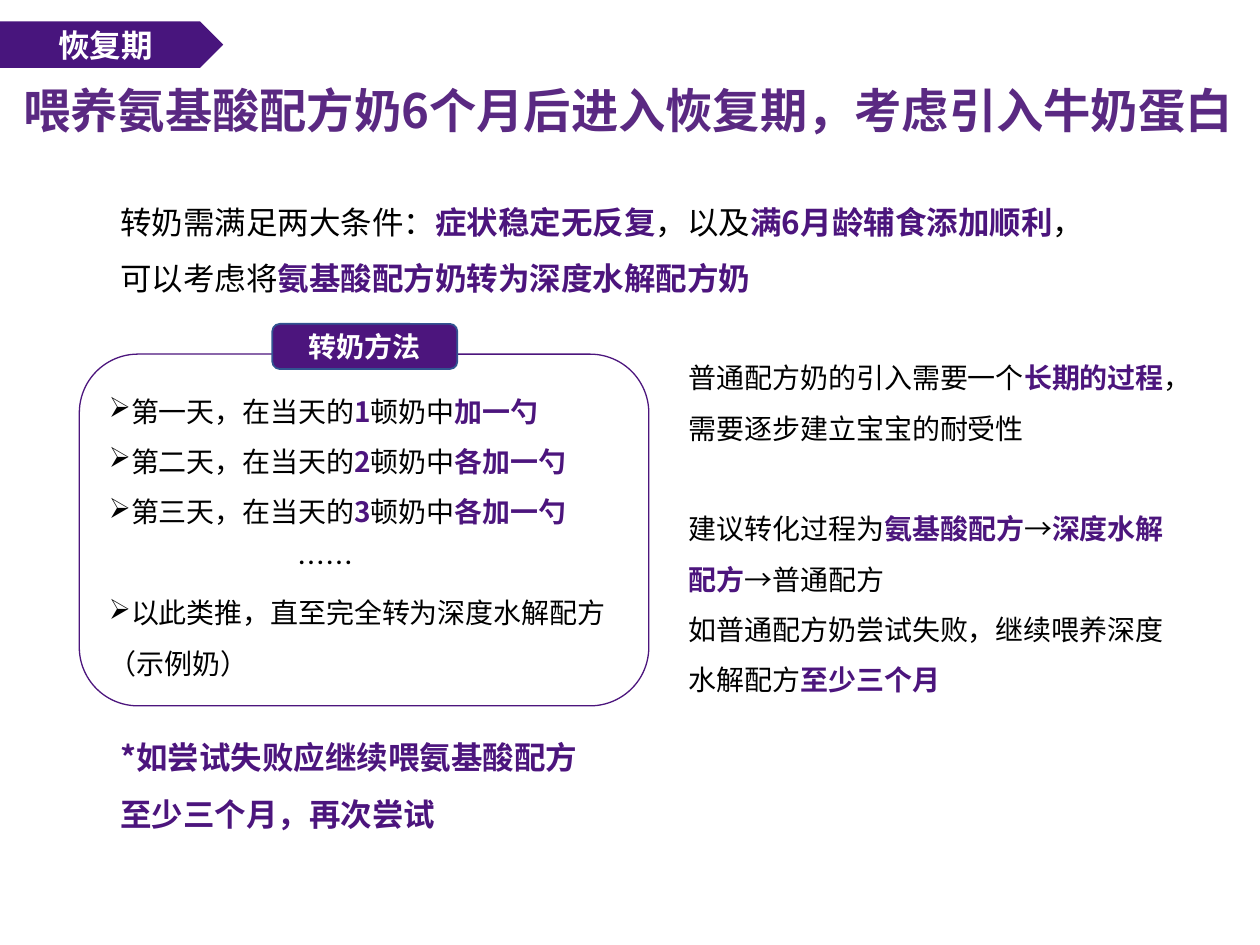
"""Builds the slide on moving a baby from amino acid formula back to milk protein."""
import pptx
import pptx.dml.color
import pptx.enum.shapes
import pptx.enum.text
import pptx.oxml.ns
import pptx.util
from lxml import etree

Cm, Pt = pptx.util.Cm, pptx.util.Pt
RGBColor = pptx.dml.color.RGBColor
SHAPES = pptx.enum.shapes.MSO_SHAPE
ALIGN = pptx.enum.text.PP_ALIGN
ANCHOR = pptx.enum.text.MSO_ANCHOR
qn = pptx.oxml.ns.qn

PURPLE = RGBColor(0x4C, 0x15, 0x7D)
TAG_PURPLE = RGBColor(0x48, 0x15, 0x7D)
TITLE_PURPLE = RGBColor(0x5A, 0x29, 0x82)
LABEL_EDGE = RGBColor(0x32, 0x54, 0x91)
BLACK = RGBColor(0, 0, 0)
WHITE = RGBColor(255, 255, 255)


class Deck:
    """Holds the text style and the current slide."""

    font = "Noto Sans CJK SC"

    def __init__(self, slide):
        self.slide = slide

    def paragraph(self, frame, parts, size, first=False, color=BLACK, strong=PURPLE,
                  spacing=1.5, align=ALIGN.LEFT):
        """Adds a paragraph whose every second part is emphasised."""
        paragraph = frame.paragraphs[0] if first else frame.add_paragraph()
        paragraph.line_spacing = spacing
        paragraph.alignment = align
        for index, words in enumerate(parts):
            emphasised = index % 2 == 1
            if not words:
                continue
            run = paragraph.add_run()
            run.text = words
            run.font.size = Pt(size)
            run.font.name = self.font
            run.font.bold = emphasised
            run.font.color.rgb = strong if emphasised else color
            latin = run.font._element.find(qn("a:latin"))
            east_asian = etree.Element(qn("a:ea"), typeface=self.font)
            latin.addnext(east_asian)
        return paragraph

    def text(self, box, paragraphs, size, **style):
        """Adds a wrapped text box and returns its paragraphs."""
        frame = self.slide.shapes.add_textbox(*map(Cm, box)).text_frame
        frame.word_wrap = True
        return [self.paragraph(frame, parts, size, first=index == 0, **style)
                for index, parts in enumerate(paragraphs)]

    def shape(self, kind, box, fill=None, edge=None, width=0.75):
        """Adds a flat preset shape and returns its text frame."""
        shape = self.slide.shapes.add_shape(kind, *map(Cm, box))
        shape.shadow.inherit = False
        if fill is None:
            shape.fill.background()
        else:
            shape.fill.solid()
            shape.fill.fore_color.rgb = fill
        if edge is None:
            shape.line.fill.background()
        else:
            shape.line.color.rgb = edge
            shape.line.width = Pt(width)
        shape.text_frame.word_wrap = True
        return shape.text_frame

    def label(self, kind, box, words, size, fill, **line):
        """Adds a filled shape with bold white centred text."""
        frame = self.shape(kind, box, fill, **line)
        frame.vertical_anchor = ANCHOR.MIDDLE
        self.paragraph(frame, ["", words], size, first=True, strong=WHITE,
                       spacing=1, align=ALIGN.CENTER)

    def steps(self, box, items, size):
        """Adds a rounded frame of arrow-bulleted steps; an ellipsis is indented instead."""
        frame = self.shape(SHAPES.ROUNDED_RECTANGLE, box, edge=PURPLE)
        frame.vertical_anchor = ANCHOR.TOP
        for index, parts in enumerate(items):
            paragraph = self.paragraph(frame, parts, size, first=index == 0)
            paragraph.level = 1
            bulleted = parts != ["……"]
            properties = paragraph._p.get_or_add_pPr()
            properties.set("marL", str(0 if bulleted else Cm(3.81)))
            properties.set("indent", str(Cm(-0.58) if bulleted else 0))
            if bulleted:
                etree.SubElement(properties, qn("a:buChar"), char="➢")


def main():
    presentation = pptx.Presentation()
    presentation.slide_width, presentation.slide_height = Cm(25.4), Cm(19.05)
    deck = Deck(presentation.slides.add_slide(presentation.slide_layouts[6]))

    title, = deck.text((-0.08, 0.99, 25.48, 2.59),
                       [["", "喂养氨基酸配方奶6个月后进入恢复期，考虑引入牛奶蛋白"]],
                       27, strong=TITLE_PURPLE, spacing=0.9, align=ALIGN.CENTER)
    title._parent.vertical_anchor = ANCHOR.MIDDLE

    deck.text((2.18, 3.58, 20.45, 2.44),
              [["转奶需满足两大条件：", "症状稳定无反复", "，以及", "满6月龄辅食添加顺利",
                "，可以考虑将", "氨基酸配方奶转为深度水解配方奶"]], 18)

    days = [("一", "加一勺"), ("二", "各加一勺"), ("三", "各加一勺")]
    method = [[f"第{day}天，在当天的", str(feeds), "顿奶中", amount]
              for feeds, (day, amount) in enumerate(days, 1)]
    method += [["……"], ["以此类推，直至完全转为深度水解配方（示例奶）"]]
    deck.steps((1.6, 7.14, 11.48, 7.09), method, 16)
    deck.label(SHAPES.ROUNDED_RECTANGLE, (5.49, 6.53, 3.73, 0.91), "转奶方法", 16,
               PURPLE, edge=LABEL_EDGE, width=1)

    deck.text((2.18, 14.38, 10.16, 2.44),
              [["", "*如尝试失败应继续喂氨基酸配方至少三个月，再次尝试"]], 18)

    tolerance, conversion, fallback = deck.text((13.64, 6.81, 10.16, 7.44), [
        ["普通配方奶的引入需要一个", "长期的过程", "，需要逐步建立宝宝的耐受性"],
        ["建议转化过程为", "氨基酸配方", "→", "深度水解配方", "→普通配方"],
        ["如普通配方奶尝试失败，继续喂养深度水解配方", "至少三个月"]], 16)
    conversion.space_before = Pt(28.8)

    deck.label(SHAPES.PENTAGON, (0, 0.43, 4.5, 0.94), "恢复期", 18, TAG_PURPLE)
    presentation.save("out.pptx")


if __name__ == "__main__":
    main()
